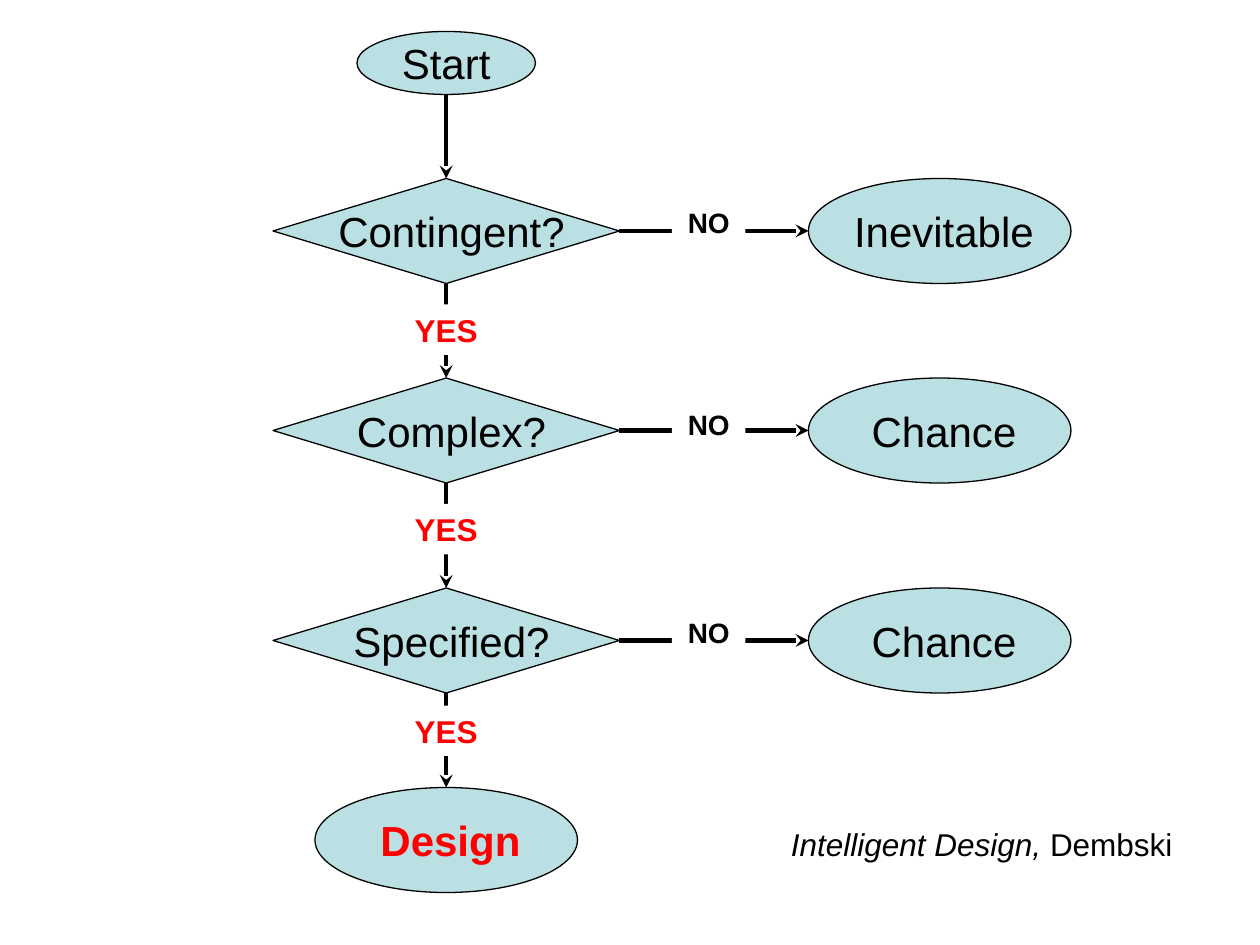
from lxml import etree
from pptx import Presentation
from pptx.dml.color import RGBColor
from pptx.enum.shapes import MSO_CONNECTOR, MSO_SHAPE
from pptx.enum.text import MSO_ANCHOR, PP_ALIGN
from pptx.oxml.ns import qn
from pptx.util import Inches, Pt

OVAL, DIAMOND, BOX = MSO_SHAPE.OVAL, MSO_SHAPE.DIAMOND, MSO_SHAPE.RECTANGLE
STRAIGHT = MSO_CONNECTOR.STRAIGHT
CENTER, TOP = PP_ALIGN.CENTER, MSO_ANCHOR.TOP
TOP_SIDE, LEFT_SIDE, BOTTOM_SIDE, RIGHT_SIDE = range(4)

THEME = {
    "font": "Arial",
    "ink": RGBColor(0, 0, 0),
    "accent": RGBColor(255, 0, 0),
    "node": RGBColor(0xBB, 0xE0, 0xE3),
    "paper": RGBColor(255, 255, 255),
    "node_size": Pt(24), "yes_size": Pt(18), "no_size": Pt(16), "source_size": Pt(18),
    "outline": Pt(0.75), "arrow": Pt(2.5),
}

deck = Presentation()
deck.slide_width, deck.slide_height = Inches(10), Inches(7.5)
page = deck.slides.add_slide(deck.slide_layouts[6])
COLUMN, ROW = deck.slide_width / 120, deck.slide_height / 90


def add_box(kind, column, row, columns, rows, fill=None, outlined=False):
    box = page.shapes.add_shape(kind, round(column * COLUMN), round(row * ROW),
                                round(columns * COLUMN), round(rows * ROW))
    box.shadow.inherit = False
    if fill is None:
        box.fill.background()
    else:
        box.fill.solid()
        box.fill.fore_color.rgb = fill
    if outlined:
        box.line.color.rgb = THEME["ink"]
        box.line.width = THEME["outline"]
    else:
        box.line.fill.background()
    return box


def write(box, spans, size, color):
    frame = box.text_frame
    frame.word_wrap, frame.vertical_anchor = True, TOP
    para = frame.paragraphs[0]
    para.alignment = CENTER
    for text, style in spans:
        span = para.add_run()
        span.text = text
        span.font.color.rgb = color
        for name, value in {"name": THEME["font"], "size": size, **style}.items():
            setattr(span.font, name, value)


INK, ACCENT = THEME["ink"], THEME["accent"]
BOLD = {"bold": True}
STEP_ROWS = [17, 36, 56]
nodes = [
    ("Start", OVAL, (34, 3, 17, 6), (36, 3, 13), INK, {}),
    ("Design", OVAL, (30, 75, 25, 10), (31.8, 77, 22.2), ACCENT, BOLD),
]
for row, question, outcome in zip(STEP_ROWS, ["Contingent?", "Complex?", "Specified?"],
                                  ["Inevitable", "Chance", "Chance"]):
    nodes += [
        (question, DIAMOND, (26, row, 33, 10), (30, row + 2, 26), INK, {}),
        (outcome, OVAL, (77, row, 25, 10), (78.8, row + 2, 22.2), INK, {}),
    ]

shapes = []
for text, kind, area, label, color, style in nodes:
    shapes.append(add_box(kind, *area, THEME["node"], True))
    caption = page.shapes.add_textbox(round(label[0] * COLUMN), round(label[1] * ROW),
                                      round(label[2] * COLUMN), round(6.1 * ROW))
    write(caption, [(text, style)], THEME["node_size"], color)

start, design, *steps = shapes
questions, outcomes = steps[::2], steps[1::2]
chain = [start, *questions, design]
links = [(a, BOTTOM_SIDE, b, TOP_SIDE) for a, b in zip(chain, chain[1:])]
links += [(a, RIGHT_SIDE, b, LEFT_SIDE) for a, b in zip(questions, outcomes)]

# DrawingML connection sites on ovals run 0 top, 2 left, 4 bottom, 6 right.
for source, source_side, target, target_side in links:
    arrow = page.shapes.add_connector(STRAIGHT, 0, 0, 0, 0)
    arrow.begin_connect(source, source_side)
    arrow.end_connect(target, target_side)
    for shape, tag, side in [(source, "stCxn", source_side), (target, "endCxn", target_side)]:
        if shape.auto_shape_type == OVAL:
            next(arrow.element.iter(qn(f"a:{tag}"))).set("idx", str(side * 2))
    arrow.line.color.rgb = INK
    arrow.line.width = THEME["arrow"]
    etree.SubElement(arrow.line._get_or_add_ln(), qn("a:tailEnd"), type="stealth")
    etree.SubElement(arrow.element.spPr, qn("a:effectLst"))

for no_row, yes_row in zip([19, 38.2, 58], [29, 48, 67.2]):
    write(add_box(BOX, 64, no_row, 7, 4.4, THEME["paper"]),
          [("NO", BOLD)], THEME["no_size"], INK)
    write(add_box(BOX, 38, yes_row, 9, 4.8, THEME["paper"]),
          [("YES", BOLD)], THEME["yes_size"], ACCENT)

citation = page.shapes.add_textbox(round(70 * COLUMN), round(78 * ROW),
                                   round(47 * COLUMN), round(4.8 * ROW))
write(citation, [("Intelligent Design, ", {"italic": True}), ("Dembski", {"italic": False})],
      THEME["source_size"], INK)

deck.save("out.pptx")
